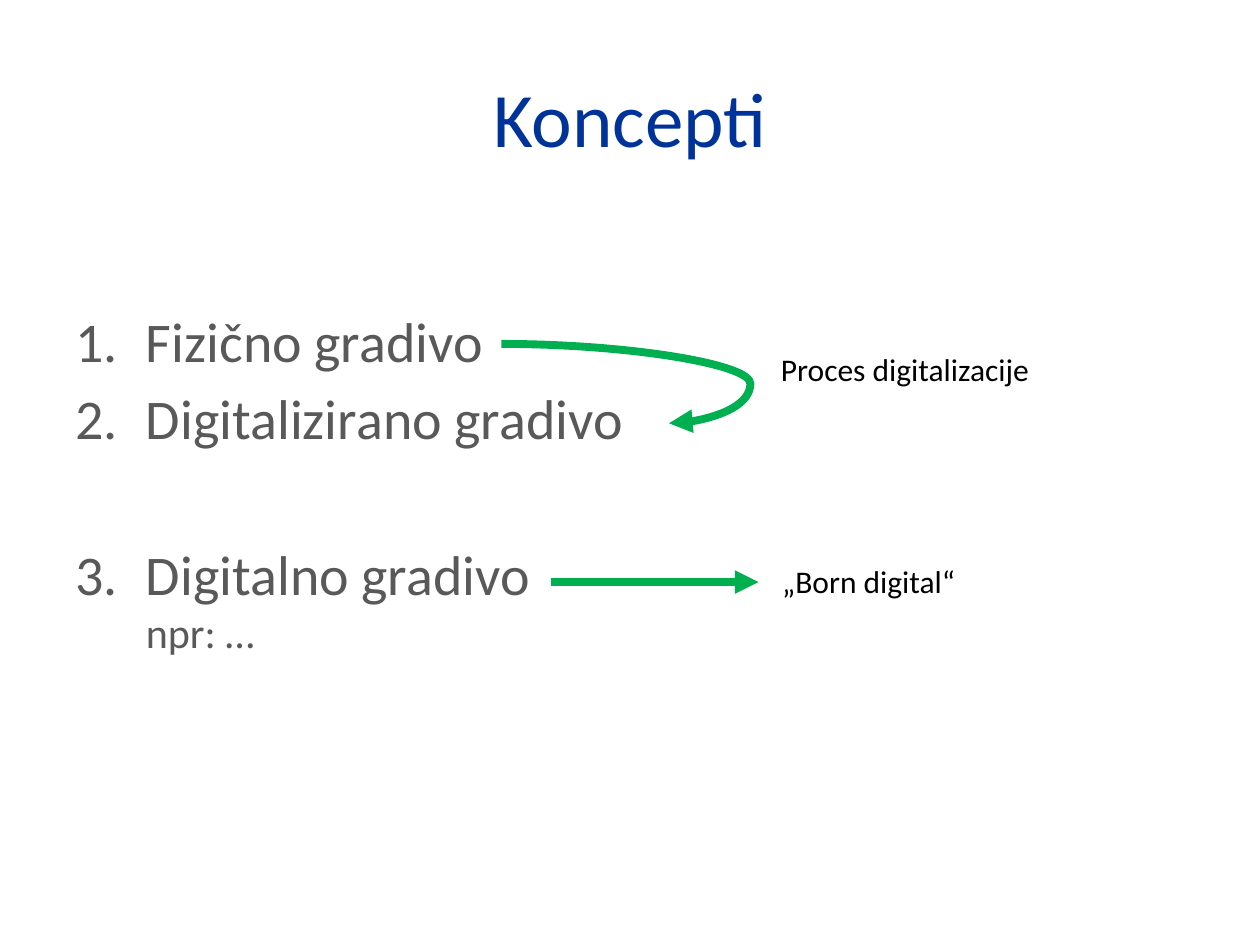
from dataclasses import dataclass

from lxml import etree
from pptx import Presentation
from pptx.dml.color import RGBColor
from pptx.enum.shapes import MSO_CONNECTOR
from pptx.enum.text import MSO_ANCHOR, PP_ALIGN
from pptx.oxml.ns import qn
from pptx.util import Inches, Pt

CURVE, STRAIGHT = MSO_CONNECTOR.CURVE, MSO_CONNECTOR.STRAIGHT
CENTER, MIDDLE = PP_ALIGN.CENTER, MSO_ANCHOR.MIDDLE


@dataclass(frozen=True)
class Theme:
    font: str = "Calibri"
    title: RGBColor = RGBColor(0x00, 0x33, 0x99)
    body: RGBColor = RGBColor(0x59, 0x59, 0x59)
    label: RGBColor = RGBColor(0x00, 0x00, 0x00)
    arrow: RGBColor = RGBColor(0x00, 0xB0, 0x50)
    title_size: int = 44
    body_size: int = 32
    note_size: int = 24
    label_size: int = 18
    arrow_width: float = 4.5


theme = Theme()


def add_run(p, text, size, color):
    r = p.add_run()
    r.text = text
    r.font.name = theme.font
    r.font.size = Pt(size)
    r.font.color.rgb = color


prs = Presentation()
prs.slide_width, prs.slide_height = Inches(10), Inches(7.5)
s = prs.slides.add_slide(prs.slide_layouts[5])

title = s.shapes.title
title.left, title.top = Inches(0.5), Inches(0.3)
title.width, title.height = Inches(9), Inches(1.25)
title.text_frame.vertical_anchor = MIDDLE
p = title.text_frame.paragraphs[0]
p.alignment = CENTER
add_run(p, "Koncepti", theme.title_size, theme.title)

items = [
    ("Fizično gradivo", 1, 0),
    ("Digitalizirano gradivo", 2, 6),
    ("Digitalno gradivo", 3, 50.5),
]
sp = s.shapes.add_textbox(Inches(0.5), Inches(2.38), Inches(9), Inches(3.89))
tf = sp.text_frame
tf.word_wrap = True
for i, (text, number, gap) in enumerate(items):
    p = tf.add_paragraph() if i else tf.paragraphs[0]
    pPr = p._p.get_or_add_pPr()
    pPr.set("marL", str(Inches(0.56)))
    pPr.set("indent", str(-Inches(0.56)))
    bullet = etree.SubElement(pPr, qn("a:buAutoNum"), type="arabicPeriod")
    if number == 3:
        bullet.set("startAt", str(number))
    p.space_before = Pt(gap)
    add_run(p, text, theme.body_size, theme.body)
p.add_line_break()
add_run(p, "npr: …", theme.note_size, theme.body)

labels = [("Proces digitalizacije", 6.1, 2.73), ("„Born digital“", 6.11, 4.41)]
for text, x, y in labels:
    sp = s.shapes.add_textbox(Inches(x), Inches(y), Inches(2.6), Inches(0.4))
    sp.text_frame.word_wrap = True
    add_run(sp.text_frame.paragraphs[0], text, theme.label_size, theme.label)

arrows = [
    (CURVE, 3.98, 2.73, 5.31, 3.36, 148600),
    (STRAIGHT, 4.37, 4.62, 6.02, 4.62, None),
]
for kind, x1, y1, x2, y2, bend in arrows:
    arrow = s.shapes.add_connector(kind, Inches(x1), Inches(y1), Inches(x2), Inches(y2))
    arrow.line.color.rgb = theme.arrow
    arrow.line.width = Pt(theme.arrow_width)
    etree.SubElement(arrow.line._get_or_add_ln(), qn("a:tailEnd"), type="triangle")
    spPr = arrow._element.spPr
    etree.SubElement(spPr, qn("a:effectLst"))
    if bend:
        guides = spPr.find(qn("a:prstGeom")).find(qn("a:avLst"))
        etree.SubElement(guides, qn("a:gd"), name="adj1", fmla=f"val {bend}")

prs.save("out.pptx")
